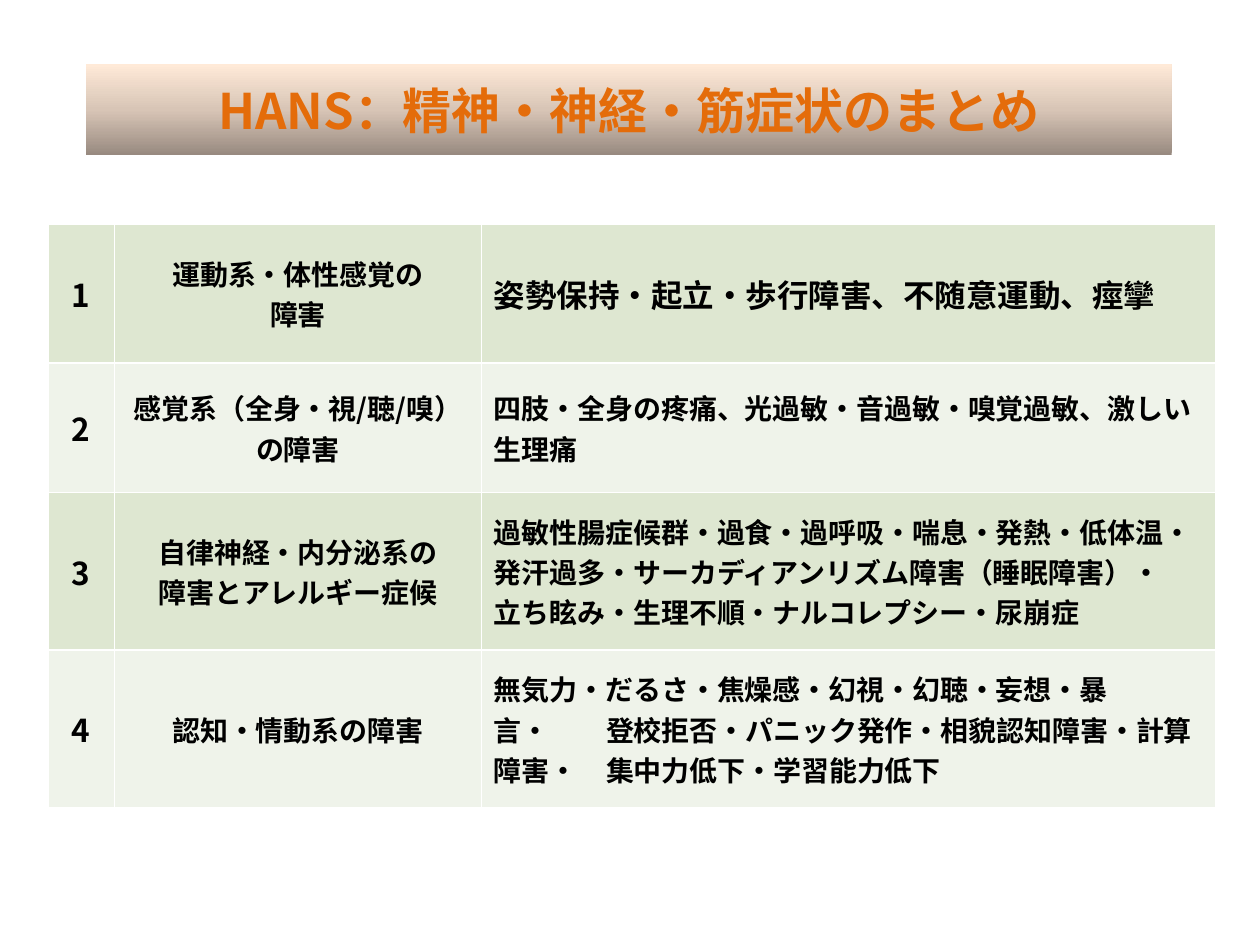
from copy import deepcopy

from lxml.etree import SubElement
from pptx import Presentation
from pptx.dml.color import RGBColor
from pptx.enum.shapes import MSO_SHAPE
from pptx.enum.text import MSO_ANCHOR, PP_ALIGN
from pptx.oxml.ns import qn
from pptx.util import Inches, Pt

FONT = "Noto Sans CJK JP"
TITLE = "HANS：精神・神経・筋症状のまとめ"
TITLE_GRADIENT = [(0, "988A80"), (0.5, "D8C5B6"), (1, "FFEAD8")]
BANDS = ["DEE7D1", "EFF3EA"]
COL_WIDTHS = [0.53, 2.91, 5.83]
ROW_HEIGHTS = [1.1, 1.03, 1.25, 1.25]
TAB_STOP = 0.89

# (category paragraphs, symptom paragraphs, symptom size); \v breaks a line
SYMPTOMS = [
    (["運動系・体性感覚の", "障害"],
     ["姿勢保持・起立・歩行障害、不随意運動、痙攣"], 18),
    (["感覚系（全身・視/聴/嗅）の障害"],
     ["四肢・全身の疼痛、光過敏・音過敏・嗅覚過敏、激しい生理痛"], 16),
    (["自律神経・内分泌系の", "障害とアレルギー症候"],
     ["過敏性腸症候群・過食・過呼吸・喘息・発熱・低体温・",
      "発汗過多・サーカディアンリズム障害（睡眠障害）・",
      "立ち眩み・生理不順・ナルコレプシー・尿崩症"], 16),
    (["認知・情動系の障害"],
     ["無気力・だるさ・焦燥感・幻視・幻聴・妄想・暴\v"
      "言・\t登校拒否・パニック発作・相貌認知障害・計算\v"
      "障害・\t集中力低下・学習能力低下"], 16),
]


def rgb(value):
    return RGBColor.from_string(value)


def write(tf, paragraphs, size, color="000000", align=PP_ALIGN.CENTER):
    for i, text in enumerate(paragraphs):
        p = tf.paragraphs[0] if i == 0 else tf.add_paragraph()
        p.alignment = align
        if "\t" in text:
            tabs = SubElement(p._p.get_or_add_pPr(), qn("a:tabLst"))
            SubElement(tabs, qn("a:tab"), pos=str(Inches(TAB_STOP)), algn="l")
        for j, line in enumerate(text.split("\v")):
            if j:
                p.add_line_break()
            r = p.add_run()
            r.text = line
            r.font.size = Pt(size)
            r.font.bold = True
            r.font.name = FONT
            r.font.color.rgb = rgb(color)
            SubElement(r._r.get_or_add_rPr(), qn("a:ea"), typeface=FONT)


def fill_gradient(fill, stops, angle):
    fill.gradient()
    fill.gradient_angle = angle
    first = fill.gradient_stops[0]._gs
    first.addnext(deepcopy(first))
    for stop, (position, color) in zip(fill.gradient_stops, stops):
        stop.position = position
        stop.color.rgb = rgb(color)


def set_borders(cell, color, width):
    tcPr = cell._tc.get_or_add_tcPr()
    for i, side in enumerate(("lnL", "lnR", "lnT", "lnB")):
        ln = tcPr.makeelement(qn(f"a:{side}"), {"w": str(Pt(width))})
        SubElement(SubElement(ln, qn("a:solidFill")), qn("a:srgbClr"), val=color)
        tcPr.insert(i, ln)


def add_title(slide):
    sp = slide.shapes.add_shape(MSO_SHAPE.RECTANGLE, Inches(0.68), Inches(0.51),
                                Inches(8.62), Inches(0.72))
    sp.shadow.inherit = False
    sp.line.fill.background()
    fill_gradient(sp.fill, TITLE_GRADIENT, 90)
    tf = sp.text_frame
    tf.word_wrap = True
    tf.vertical_anchor = MSO_ANCHOR.MIDDLE
    write(tf, [TITLE], 28, color="E46C0A")


def add_symptom_table(slide):
    table = slide.shapes.add_table(
        len(SYMPTOMS), len(COL_WIDTHS), Inches(0.38), Inches(1.78),
        Inches(sum(COL_WIDTHS)), Inches(sum(ROW_HEIGHTS))).table
    table.first_row = table.horz_banding = False
    for column, width in zip(table.columns, COL_WIDTHS):
        column.width = Inches(width)
    for i, (category, symptoms, size) in enumerate(SYMPTOMS):
        table.rows[i].height = Inches(ROW_HEIGHTS[i])
        cells = table.rows[i].cells
        write(cells[0].text_frame, [str(i + 1)], 18)
        write(cells[1].text_frame, category, 16)
        write(cells[2].text_frame, symptoms, size, align=PP_ALIGN.LEFT)
        for cell in cells:
            cell.vertical_anchor = MSO_ANCHOR.MIDDLE
            cell.fill.solid()
            cell.fill.fore_color.rgb = rgb(BANDS[i % 2])
            set_borders(cell, "FFFFFF", 1)


def main():
    prs = Presentation()
    prs.slide_width, prs.slide_height = Inches(10), Inches(7.5)
    slide = prs.slides.add_slide(prs.slide_layouts[6])
    add_title(slide)
    add_symptom_table(slide)
    prs.save("out.pptx")


if __name__ == "__main__":
    main()
